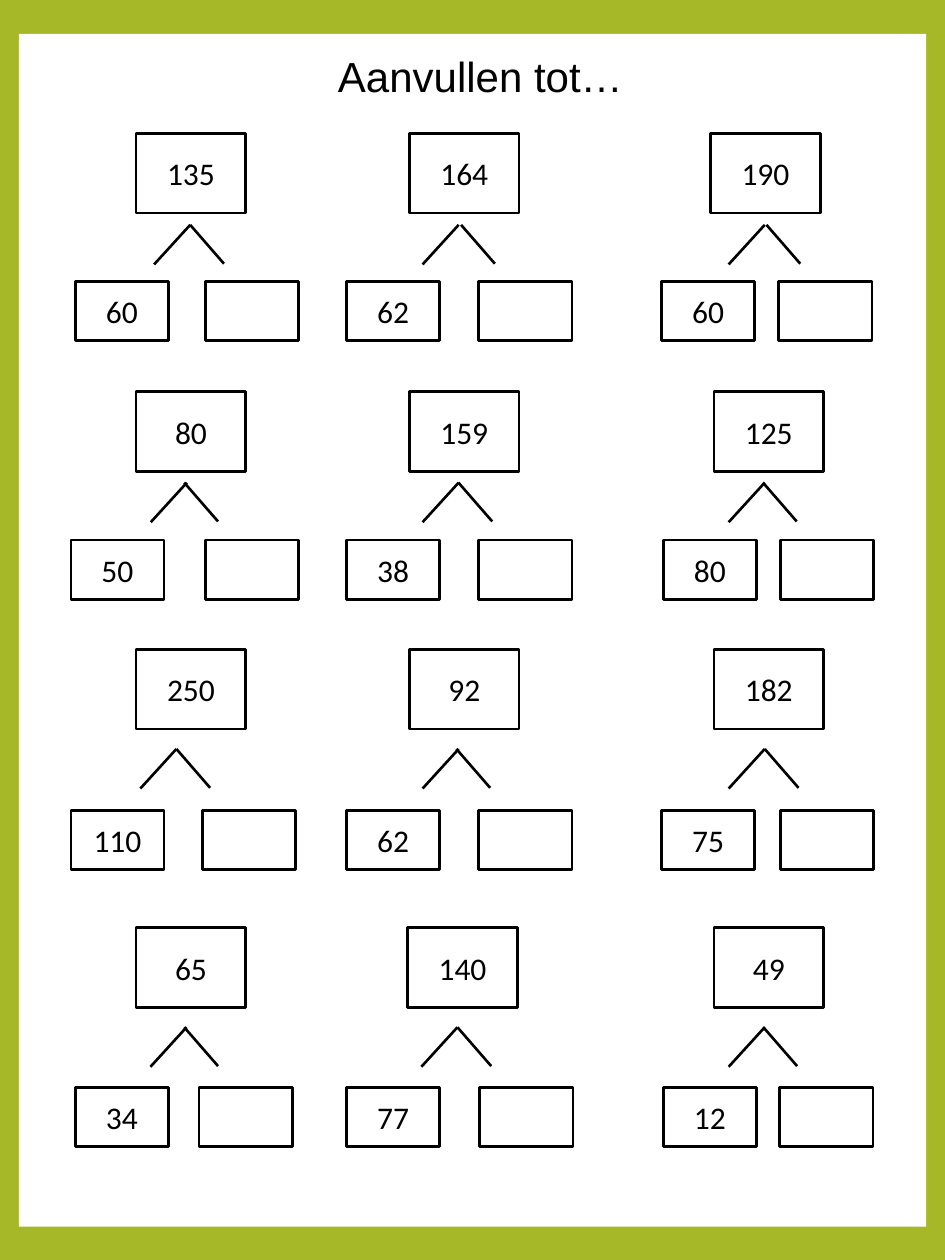
import pptx
import pptx.dml.color
import pptx.enum.shapes
import pptx.enum.text
import pptx.oxml.ns
import pptx.util
import lxml.etree

Pt = pptx.util.Pt
COLORS = {"border": "A6B727", "paper": "FFFFFF", "ink": "000000"}
TOTAL_SIZE = (62.7, 45.4)
PART_SIZE = (53.3, 33.8)
LEFT_LEG = (-20.6, 22.6)
RIGHT_LEG = (19.3, 22.2)

# Each row: top of totals, top of branches, top of parts, and its puzzles.
# Each puzzle: total, known part, lefts of total, known part and empty part,
# then the upper x of the left and right branch.
ROWS = [
    (76.3, 128.5, 161, [
        ("135", "60", 77.8, 43, 117.3, 108.7, 108.7),
        ("164", "62", 234, 198, 273.6, 262.1, 263.5),
        ("190", "60", 406.1, 378, 445, 437, 438),
    ]),
    (223.9, 275.8, 308.7, [
        ("80", "50", 77.8, 40.5, 117.3, 106.8, 105.3),
        ("159", "38", 234, 198, 273.6, 262.1, 262),
        ("125", "80", 408, 379, 446, 437, 436),
    ]),
    (371.2, 428, 463, [
        ("250", "110", 77.8, 40.5, 115.8, 100.8, 100.8),
        ("92", "62", 234, 198, 273.6, 262.1, 260.8),
        ("182", "75", 408, 378, 446, 437, 437),
    ]),
    (530.2, 587, 621.4, [
        ("65", "34", 77.8, 43, 113.8, 106.6, 105.3),
        ("140", "77", 233, 198, 274.2, 261.4, 261.4),
        ("49", "12", 408, 379, 445.6, 437, 436.2),
    ]),
]


def rgb(name):
    return pptx.dml.color.RGBColor.from_string(COLORS[name])


class Worksheet:
    """Holds the style and the current slide."""

    def __init__(self, slide):
        self.slide = slide
        self.line_width = Pt(1.5)
        fill = slide.background.fill
        fill.solid()
        fill.fore_color.rgb = rgb("border")

    def add_text(self, frame, text, font, size):
        paragraph = frame.paragraphs[0]
        paragraph.alignment = pptx.enum.text.PP_ALIGN.CENTER
        run = paragraph.add_run()
        run.text = text
        run.font.name = font
        run.font.size = Pt(size)
        run.font.color.rgb = rgb("ink")

    def title(self, text, left, top, width, height):
        box = self.slide.shapes.add_textbox(Pt(left), Pt(top), Pt(width), Pt(height))
        frame = box.text_frame
        frame.word_wrap = False
        frame.auto_size = pptx.enum.text.MSO_AUTO_SIZE.SHAPE_TO_FIT_TEXT
        self.add_text(frame, text, "Arial", 24)

    def box(self, left, top, size, text="", outlined=True):
        width, height = size
        shape = self.slide.shapes.add_shape(
            pptx.enum.shapes.MSO_SHAPE.RECTANGLE,
            Pt(left), Pt(top), Pt(width), Pt(height))
        shape.shadow.inherit = False
        shape.fill.solid()
        shape.fill.fore_color.rgb = rgb("paper")
        if outlined:
            shape.line.color.rgb = rgb("ink")
            shape.line.width = self.line_width
        else:
            shape.line.fill.background()
        if text:
            shape.text_frame.vertical_anchor = pptx.enum.text.MSO_ANCHOR.MIDDLE
            self.add_text(shape.text_frame, text, "Calibri", 18)

    def branch(self, x, y, leg):
        connector = self.slide.shapes.add_connector(
            pptx.enum.shapes.MSO_CONNECTOR.STRAIGHT,
            Pt(x), Pt(y), Pt(x + leg[0]), Pt(y + leg[1]))
        connector.line.color.rgb = rgb("ink")
        connector.line.width = self.line_width
        properties = connector._element.spPr
        lxml.etree.SubElement(properties, pptx.oxml.ns.qn("a:effectLst"))


def main():
    presentation = pptx.Presentation()
    presentation.slide_width = Pt(540)
    presentation.slide_height = Pt(720)
    slide = presentation.slides.add_slide(presentation.slide_layouts[6])
    worksheet = Worksheet(slide)

    # Paper and heading
    worksheet.box(10.8, 19.4, (518.4, 681.6), outlined=False)
    worksheet.title("Aanvullen tot…", 185, 25.5, 179, 36)

    # Number puzzles
    for total_top, branch_top, part_top, puzzles in ROWS:
        for total, part, total_left, part_left, empty_left, left_x, right_x in puzzles:
            worksheet.box(total_left, total_top, TOTAL_SIZE, total)
            worksheet.branch(left_x, branch_top, LEFT_LEG)
            worksheet.branch(right_x, branch_top, RIGHT_LEG)
            worksheet.box(part_left, part_top, PART_SIZE, part)
            worksheet.box(empty_left, part_top, PART_SIZE)

    presentation.save("out.pptx")


if __name__ == "__main__":
    main()
